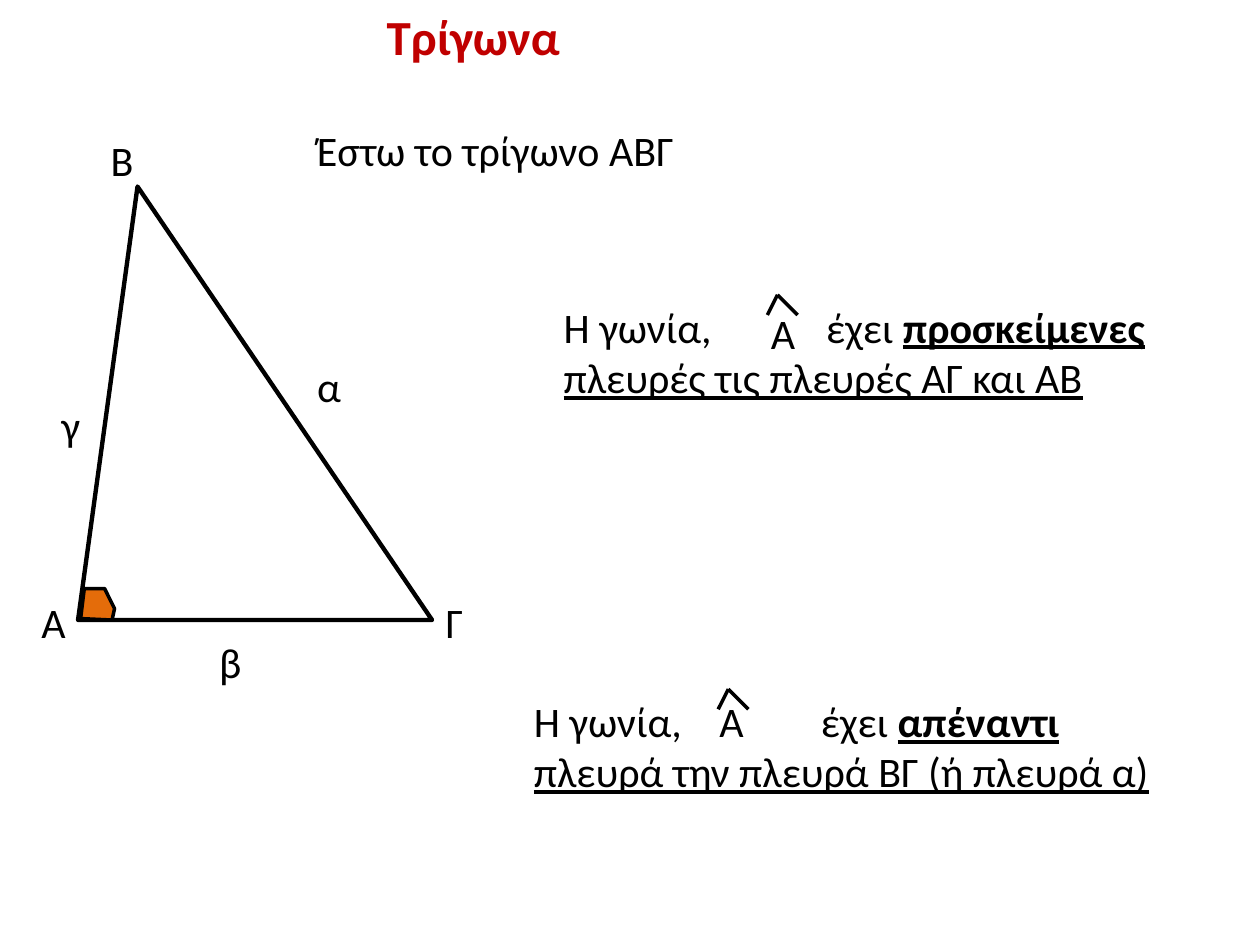
from lxml import etree
from pptx import Presentation
from pptx.dml.color import RGBColor
from pptx.enum.shapes import MSO_CONNECTOR, MSO_SHAPE
from pptx.enum.text import MSO_ANCHOR, MSO_AUTO_SIZE, PP_ALIGN
from pptx.oxml.ns import qn
from pptx.util import Pt

TRIANGLE = MSO_SHAPE.ISOSCELES_TRIANGLE
STRAIGHT = MSO_CONNECTOR.STRAIGHT
TOP = MSO_ANCHOR.TOP
NO_AUTO_SIZE = MSO_AUTO_SIZE.NONE
LEFT = PP_ALIGN.LEFT

BLACK = RGBColor(0x00, 0x00, 0x00)
RED = RGBColor(0xC0, 0x00, 0x00)
ORANGE = RGBColor(0xE4, 0x6C, 0x0A)
FONT = "Calibri"
TITLE_ONLY = 5


def add_run(paragraph, text, size=24, color=BLACK, bold=False, underline=False):
    """Append one formatted run to a paragraph."""
    run = paragraph.add_run()
    run.text = text
    font = run.font
    font.name, font.size, font.bold, font.underline = FONT, Pt(size), bold, underline
    font.color.rgb = color


def add_text_box(slide, left, top, width, height):
    """Add a wrapping text box and return its first paragraph."""
    box = slide.shapes.add_textbox(Pt(left), Pt(top), Pt(width), Pt(height))
    box.text_frame.word_wrap = True
    return box.text_frame.paragraphs[0]


def add_label(slide, text, left, top, width=40, height=36):
    """Add a text box with one plain run."""
    add_run(add_text_box(slide, left, top, width, height), text)


def set_outline(shape, width):
    """Give a shape a black outline and no shadow."""
    shape.shadow.inherit = False
    shape.line.color.rgb = BLACK
    shape.line.width = Pt(width)


def place_title(slide, left, top, width, height):
    """Move and format the title placeholder."""
    title = slide.shapes.title
    title.left, title.top, title.width, title.height = Pt(left), Pt(top), Pt(width), Pt(height)
    frame = title.text_frame
    frame.auto_size = NO_AUTO_SIZE
    frame.vertical_anchor = TOP
    paragraph = frame.paragraphs[0]
    paragraph.alignment = LEFT
    add_run(paragraph, "Τρίγωνα", 28, RED, bold=True)


def draw_triangle(slide, left, top, width, height):
    """Draw the triangle with its marked angle and its vertex and side labels."""
    triangle = slide.shapes.add_shape(TRIANGLE, Pt(left), Pt(top), Pt(width), Pt(height))
    triangle.adjustments[0] = 0.168
    triangle.fill.background()
    set_outline(triangle, 2.5)

    bottom = top + height
    corners = [(1.5, -0.8), (3.6, -18), (15.2, -18), (20.9, -6.5), (19.5, 0)]
    points = [(Pt(left + x), Pt(bottom + y)) for x, y in corners]
    builder = slide.shapes.build_freeform(*points[0], scale=1.0)
    builder.add_line_segments(points[1:], close=True)
    angle = builder.convert_to_shape()
    angle.fill.solid()
    angle.fill.fore_color.rgb = ORANGE
    set_outline(angle, 2)

    for text, x, y in (("Α", -28, 231), ("Γ", 203, 231), ("Β", 11.5, -33)):
        add_label(slide, text, left + x, top + y)
    for text, x, y in (("α", 129.6, 96), ("β", 73.5, 253.5), ("γ", -16.6, 118)):
        add_label(slide, text, left + x, top + y, 27.5)


def draw_hat(slide, left, top):
    """Draw the angle sign as two grouped lines meeting at the top."""
    group = slide.shapes.add_group_shape()
    for x in (0, 17.3):
        line = group.shapes.add_connector(
            STRAIGHT, Pt(left + 5.8), Pt(top), Pt(left + x), Pt(top + 11.5))
        line.line.color.rgb = BLACK
        line.line.width = Pt(2)
        etree.SubElement(line._element.spPr, qn("a:effectLst"))


def write_statement(slide, left, top, opening, keyword, ending, tabs, hat_left):
    """Write a sentence about angle Α with tab gaps, and the sign above its letter."""
    paragraph = add_text_box(slide, left, top, 376.5, 94.3)
    tab_list = etree.SubElement(paragraph._p.get_or_add_pPr(), qn("a:tabLst"))
    for position in tabs:
        etree.SubElement(tab_list, qn("a:tab"), pos=str(Pt(position)), algn="l")
    add_run(paragraph, opening)
    add_run(paragraph, keyword, bold=True, underline=True)
    add_run(paragraph, ending, underline=True)
    draw_hat(slide, left + hat_left, top)


def main():
    """Build the slide and save it."""
    presentation = Presentation()
    presentation.slide_width, presentation.slide_height = Pt(720), Pt(540)
    slide = presentation.slides.add_slide(presentation.slide_layouts[TITLE_ONLY])
    place_title(slide, 213.8, 0, 360, 41)
    draw_triangle(slide, 44.6, 106.6, 202.3, 247.7)
    add_label(slide, "Έστω το τρίγωνο ΑΒΓ", 174, 67.7, 360, 65.5)
    write_statement(slide, 315, 168.5, "Η γωνία,\tέχει ", "προσκείμενες",
                    " πλευρές τις πλευρές ΑΓ και ΑΒ", [150], 123.5)
    add_label(slide, "Α", 433.4, 172, 50.4)
    write_statement(slide, 298, 393.8, "Η γωνία,\tΑ\tέχει ", "απέναντι",
                    " πλευρά την πλευρά ΒΓ (ή πλευρά α)", [106, 164], 112.4)
    presentation.save("out.pptx")


if __name__ == "__main__":
    main()
